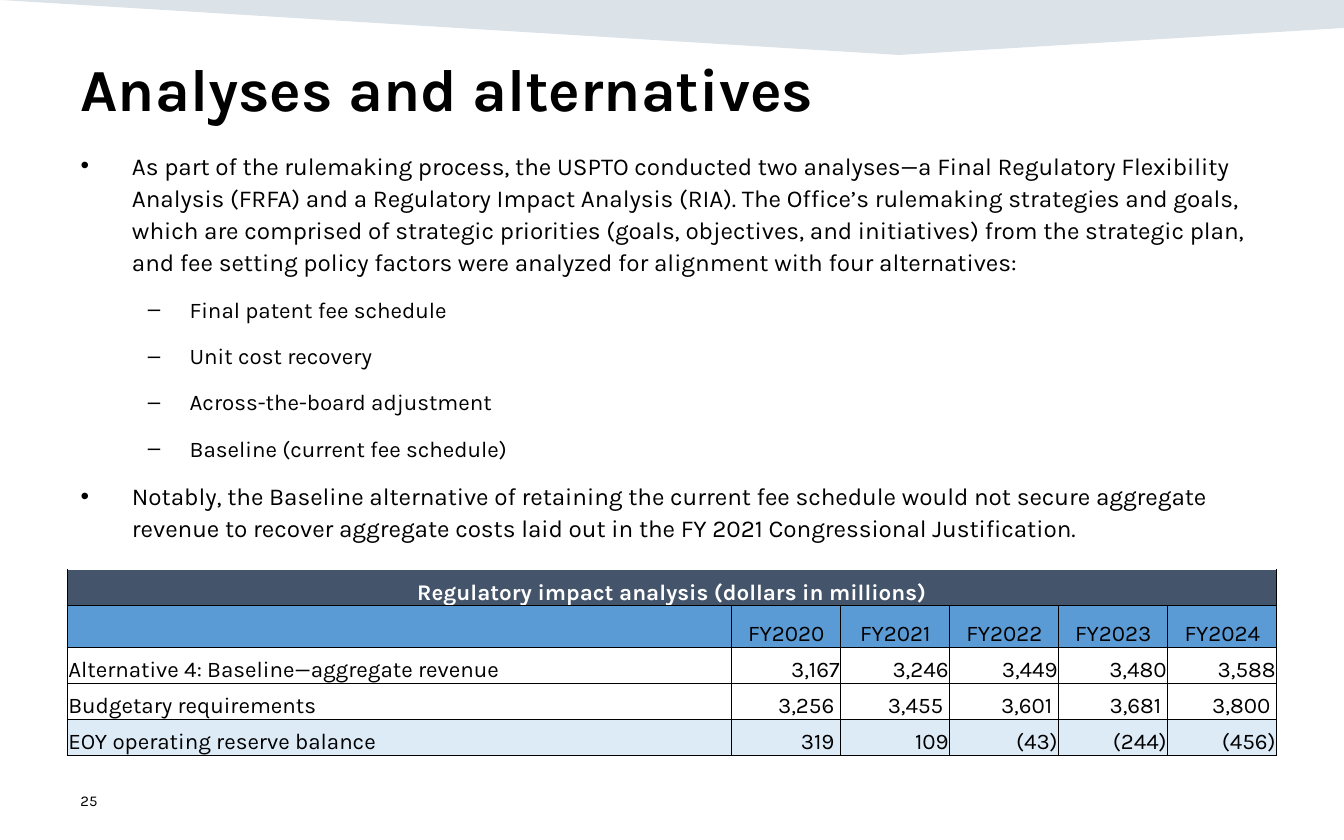
from dataclasses import dataclass

from lxml import etree
from pptx import Presentation
from pptx import util as u
from pptx.dml.color import RGBColor
from pptx.enum import text
from pptx.oxml import ns

FONT = "Karla"
COLORS = {
    "ink": "000000",
    "white": "FFFFFF",
    "banner": "164469",
    "heading": "44546A",
    "years": "5B9BD5",
    "balance": "DDEBF7",
}
LEFT, WIDTH = u.Cm(1.27), u.Cm(22.86)
ROW_HEIGHT = u.Cm(0.68)
LABEL_WIDTH, YEAR_WIDTH = u.Cm(12.56), u.Cm(2.06)
LEVELS = {0: (13, 0.97, -0.97), 1: (12, 2.06, -0.79)}


@dataclass
class Bullet:
    text: str
    level: int = 0


@dataclass
class TableRow:
    cells: list[str]
    fill: str = "white"
    color: str = "ink"
    bold: bool = False
    centered: bool = False


BULLETS = [
    Bullet("As part of the rulemaking process, the USPTO conducted two analyses—a Final Regulatory "
           "Flexibility Analysis (FRFA) and a Regulatory Impact Analysis (RIA). The Office’s rulemaking "
           "strategies and goals, which are comprised of strategic priorities (goals, objectives, and "
           "initiatives) from the strategic plan, and fee setting policy factors were analyzed for "
           "alignment with four alternatives:"),
    Bullet("Final patent fee schedule", 1),
    Bullet("Unit cost recovery", 1),
    Bullet("Across-the-board adjustment", 1),
    Bullet("Baseline (current fee schedule)", 1),
    Bullet("Notably, the Baseline alternative of retaining the current fee schedule would not secure "
           "aggregate revenue to recover aggregate costs laid out in the FY 2021 Congressional "
           "Justification."),
]
YEARS = [f"FY{year}" for year in range(2020, 2025)]
ROWS = [
    TableRow(["Regulatory impact analysis (dollars in millions)"] + [""] * len(YEARS),
             "heading", "white", True, True),
    TableRow([""] + YEARS, "years", centered=True),
    TableRow(["Alternative 4: Baseline—aggregate revenue", "3,167", "3,246", "3,449", "3,480", "3,588"]),
    TableRow(["Budgetary requirements", "3,256 ", "3,455 ", "3,601 ", "3,681 ", "3,800 "]),
    TableRow(["EOY operating reserve balance", "319 ", "109", "(43)", "(244)", "(456)"], "balance"),
]


def rgb(name: str) -> RGBColor:
    return RGBColor.from_string(COLORS[name])


def format_run(r, size: float, color: str = "ink", bold: bool = False) -> None:
    r.font.name = FONT
    r.font.size = u.Pt(size)
    r.font.bold = bold
    r.font.color.rgb = rgb(color)


def place(sp, top: float, height: float, width: int = WIDTH) -> None:
    sp.left, sp.top, sp.width, sp.height = LEFT, u.Cm(top), width, u.Cm(height)


def add_banner(s) -> None:
    points = [(25.4, 0), (25.4, 0.53), (16.99, 1.04)]
    builder = s.shapes.build_freeform(0, 0)
    builder.add_line_segments([(u.Cm(x), u.Cm(y)) for x, y in points], close=True)
    sp = builder.convert_to_shape()
    sp.shadow.inherit = False
    sp.fill.solid()
    sp.fill.fore_color.rgb = rgb("banner")
    sp.line.fill.background()
    color = sp.element.spPr.find(ns.qn("a:solidFill")).find(ns.qn("a:srgbClr"))
    etree.SubElement(color, ns.qn("a:alpha")).set("val", "15000")
    s.shapes.element.insert(2, sp.element)


def add_title(s, title: str) -> None:
    sp = s.shapes.title
    place(sp, 0.86, 2.64)
    tf = sp.text_frame
    tf.text = title
    tf.auto_size = text.MSO_AUTO_SIZE.NONE
    tf.vertical_anchor = text.MSO_ANCHOR.TOP
    p = tf.paragraphs[0]
    p.alignment = text.PP_ALIGN.LEFT
    format_run(p.runs[0], 32, bold=True)


def add_body(s, bullets: list[Bullet]) -> None:
    sp = s.placeholders[1]
    place(sp, 2.67, 8.13)
    tf = sp.text_frame
    tf.text = "\n".join(bullet.text for bullet in bullets)
    tf.auto_size = text.MSO_AUTO_SIZE.NONE
    tf.vertical_anchor = text.MSO_ANCHOR.TOP
    for p, bullet in zip(tf.paragraphs, bullets):
        size, margin, indent = LEVELS[bullet.level]
        p.level = bullet.level
        p.line_spacing = 1.1
        p.space_before = u.Pt(9)
        pPr = p._p.get_or_add_pPr()
        pPr.set("marL", str(u.Cm(margin)))
        pPr.set("indent", str(u.Cm(indent)))
        format_run(p.runs[0], size)


def add_page_number(s, number: str) -> None:
    sp = s.shapes.add_textbox(0, 0, 0, 0)
    place(sp, 14.71, 0.84, u.Cm(5.72))
    tf = sp.text_frame
    tf.word_wrap = True
    tf.text = number
    tf.vertical_anchor = text.MSO_ANCHOR.MIDDLE
    format_run(tf.paragraphs[0].runs[0], 8)


def add_borders(cell, sides: str) -> None:
    tcPr = cell._tc.get_or_add_tcPr()
    for side in sides:
        ln = etree.SubElement(tcPr, ns.qn(f"a:ln{side}"), w=str(u.Pt(0.5)))
        fill = etree.SubElement(ln, ns.qn("a:solidFill"))
        etree.SubElement(fill, ns.qn("a:srgbClr"), val=COLORS["ink"])


def fill_cell(cell, row: TableRow, index: int, sides: str) -> None:
    add_borders(cell, sides)
    cell.fill.solid()
    cell.fill.fore_color.rgb = rgb(row.fill)
    cell.margin_left = cell.margin_right = cell.margin_top = u.Cm(0.02)
    cell.margin_bottom = 0
    cell.vertical_anchor = text.MSO_ANCHOR.BOTTOM
    p = cell.text_frame.paragraphs[0]
    if row.centered:
        p.alignment = text.PP_ALIGN.CENTER
    else:
        p.alignment = text.PP_ALIGN.RIGHT if index else text.PP_ALIGN.LEFT
    r = p.add_run()
    r.text = row.cells[index]
    format_run(r, 12, row.color, row.bold)


def add_impact_table(s, rows: list[TableRow]) -> None:
    columns = len(rows[0].cells)
    frame = s.shapes.add_table(len(rows), columns, LEFT, u.Cm(10.77), WIDTH, ROW_HEIGHT * len(rows))
    table = frame.table
    table.first_row = table.horz_banding = False
    for index, column in enumerate(table.columns):
        column.width = YEAR_WIDTH if index else LABEL_WIDTH
    for number, row in enumerate(rows):
        table.rows[number].height = ROW_HEIGHT
        for index in range(columns):
            fill_cell(table.cell(number, index), row, index, "LRTB" if number else "LRB")
    table.cell(0, 0).merge(table.cell(0, columns - 1))


def main() -> None:
    prs = Presentation()
    prs.slide_width, prs.slide_height = u.Cm(25.4), u.Cm(15.88)
    s = prs.slides.add_slide(prs.slide_layouts[1])
    add_banner(s)
    add_title(s, "Analyses and alternatives")
    add_body(s, BULLETS)
    add_page_number(s, "25")
    add_impact_table(s, ROWS)
    prs.save("out.pptx")


if __name__ == "__main__":
    main()
